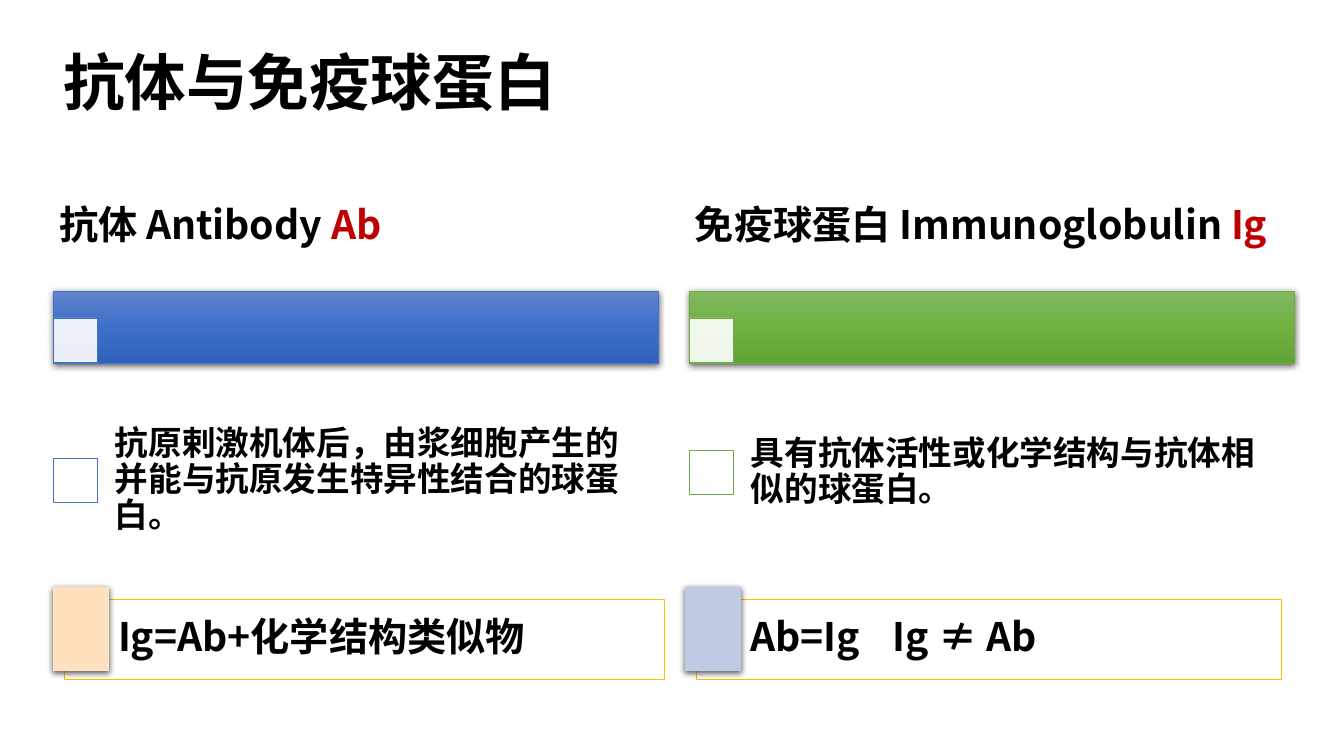
from copy import deepcopy

from lxml import etree
from pptx import Presentation
from pptx.dml.color import RGBColor
from pptx.enum.shapes import MSO_SHAPE
from pptx.enum.text import MSO_ANCHOR
from pptx.oxml.ns import qn
from pptx.util import Pt

PX = 914400 / 100.8
RECT = MSO_SHAPE.RECTANGLE
MIDDLE = MSO_ANCHOR.MIDDLE
SC, JP = "Noto Sans CJK SC", "Noto Sans CJK JP"

BLACK = RGBColor(0x00, 0x00, 0x00)
WHITE = RGBColor(0xFF, 0xFF, 0xFF)
RED = RGBColor(0xC0, 0x00, 0x00)
GOLD = RGBColor(0xFF, 0xC0, 0x00)
BLUE = RGBColor(0x44, 0x72, 0xC4)
GREEN = RGBColor(0x70, 0xAD, 0x47)
PEACH = RGBColor(0xFF, 0xE2, 0xBD)
LAVENDER = RGBColor(0xC1, 0xCA, 0xE4)
BLUE_STOPS = [RGBColor(0x61, 0x83, 0xCB), RGBColor(0x3E, 0x70, 0xCA), RGBColor(0x30, 0x62, 0xBB)]
GREEN_STOPS = [RGBColor(0x81, 0xB8, 0x61), RGBColor(0x6F, 0xB2, 0x42), RGBColor(0x62, 0xA3, 0x36)]


def box(at, fill, line=None, alpha=None, shadow=False):
    """Add a rectangle; a list as fill makes a vertical three-stop gradient."""
    sp = s.shapes.add_shape(RECT, *(round(v * PX) for v in at))
    sp.shadow.inherit = False
    spPr = sp._element.spPr
    if isinstance(fill, list):
        sp.fill.gradient()
        sp.fill.gradient_angle = 270
        gsLst = spPr.find(".//" + qn("a:gsLst"))
        gsLst.insert(1, deepcopy(gsLst[0]))
        for stop, color, pos in zip(sp.fill.gradient_stops, fill, (0, 0.5, 1)):
            stop.color.rgb = color
            stop.position = pos
    else:
        sp.fill.solid()
        sp.fill.fore_color.rgb = fill
    if alpha:
        clr = spPr.find(qn("a:solidFill"))[0]
        etree.SubElement(clr, qn("a:alpha"), val=str(alpha * 1000))
    if line:
        sp.line.color.rgb = line
        sp.line.width = Pt(0.5)
    else:
        sp.line.fill.background()
    if shadow:
        shdw = etree.SubElement(spPr.find(qn("a:effectLst")), qn("a:outerShdw"),
                                blurRad="57150", dist="19050", dir="5400000", rotWithShape="0")
        clr = etree.SubElement(shdw, qn("a:srgbClr"), val="000000")
        etree.SubElement(clr, qn("a:alpha"), val="63000")
    return sp


def write(text, at=None, sp=None, size=28, font=SC, inset=(10, 5, 10, 5), accent="", tab=None):
    """Put bold text, with an optional red ending, in sp or in a new text box."""
    sp = sp or s.shapes.add_textbox(*(round(v * PX) for v in at))
    tf = sp.text_frame
    tf.word_wrap = True
    tf.vertical_anchor = MIDDLE
    tf.margin_left, tf.margin_top, tf.margin_right, tf.margin_bottom = (round(v * PX) for v in inset)
    p = tf.paragraphs[0]
    p.alignment = 1
    p.line_spacing = 0.9
    if tab:
        tabLst = etree.SubElement(p._p.get_or_add_pPr(), qn("a:tabLst"))
        etree.SubElement(tabLst, qn("a:tab"), pos=str(round(tab * PX)), algn="l")
    for part, color in ((text, BLACK), (accent, RED)):
        if part:
            r = p.add_run()
            r.text = part
            r.font.size = Pt(size)
            r.font.bold = True
            r.font.name = font
            r.font.color.rgb = color
            etree.SubElement(r._r.get_or_add_rPr(), qn("a:ea"), typeface=font)


prs = Presentation()
prs.slide_width, prs.slide_height = round(1344 * PX), round(756 * PX)
s = prs.slides.add_slide(prs.slide_layouts[6])

write("抗体与免疫球蛋白", at=(53, 13, 1159, 146), size=44)

# left, colour, bar gradient, heading, abbreviation, definition, definition height
columns = [
    (53, BLUE, BLUE_STOPS, "抗体 Antibody ", "Ab",
     "抗原剌激机体后，由浆细胞产生的并能与抗原发生特异性结合的球蛋白。", 177),
    (689, GREEN, GREEN_STOPS, "免疫球蛋白 Immunoglobulin ", "Ig",
     "具有抗体活性或化学结构与抗体相似的球蛋白。", 161),
]
for x, color, stops, heading, abbr, definition, h in columns:
    box((x, 291, 605, 72), stops, color, shadow=True)
    box((x, 318, 44, 44), WHITE, color, alpha=90)
    write(heading, at=(x, 163, 605, 128), inset=(6, 4, 6, 4), accent=abbr)
    box((x, 392 + h // 2 - 22, 44, 44), WHITE, color)
    write(definition, at=(x + 43, 392, 562, h), size=24, inset=(19, 19, 19, 19))

# left, frame width, tab colour, formula, tab stop
formulas = [
    (53, 600, PEACH, "Ig=Ab+化学结构类似物", None),
    (685, 585, LAVENDER, "Ab=Ig\tIg ≠ Ab", 143),
]
for x, w, color, formula, tab in formulas:
    frame = box((x + 11, 599, w, 80), WHITE, GOLD, alpha=40)
    write(formula, sp=frame, font=JP, inset=(54, 8, 8, 8), tab=tab)
    box((x, 587, 56, 84), color, shadow=True)

prs.save("out.pptx")
